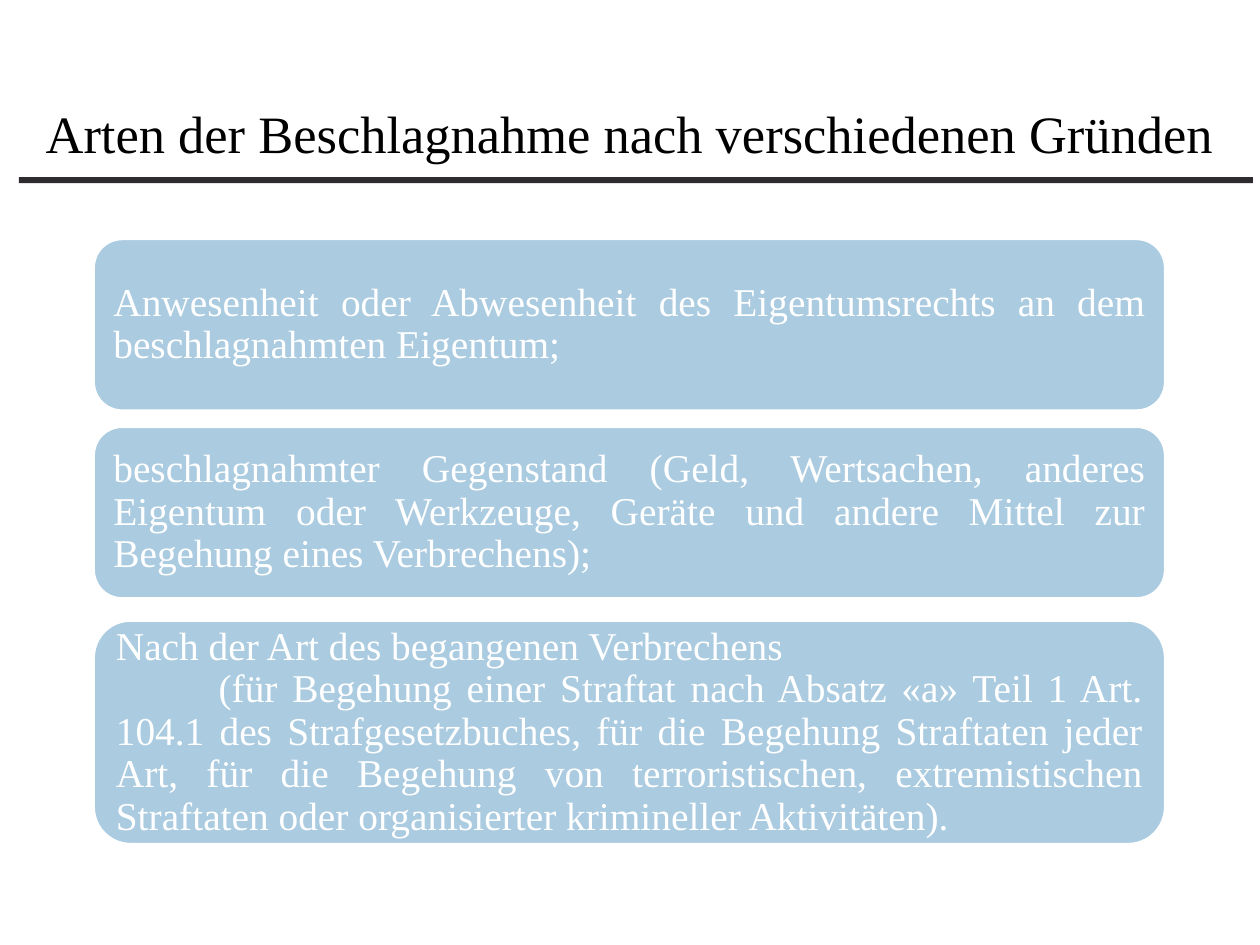
from pptx import Presentation
from pptx.dml.color import RGBColor
from pptx.enum import shapes, text
from pptx.util import Inches, Pt

TITLE = "Arten der Beschlagnahme nach verschiedenen Gründen"
# One entry per box: top, height, paragraphs as (first-line indent, wording)
GROUNDS = [
    (2.02, 1.46, [(0, "Anwesenheit oder Abwesenheit des Eigentumsrechts an dem "
                      "beschlagnahmten Eigentum;")]),
    (3.61, 1.46, [(0, "beschlagnahmter Gegenstand (Geld, Wertsachen, anderes Eigentum "
                      "oder Werkzeuge, Geräte und andere Mittel zur Begehung eines "
                      "Verbrechens);")]),
    (5.25, 1.9, [(0, "Nach der Art des begangenen Verbrechens"),
                 (0.87, "(für Begehung einer Straftat nach Absatz «a» Teil 1 Art. 104.1 "
                        "des Strafgesetzbuches, für die Begehung Straftaten jeder Art, "
                        "für die Begehung von terroristischen, extremistischen "
                        "Straftaten oder organisierter krimineller Aktivitäten).")]),
]
THEME = {
    "font": "Times New Roman",
    "title_size": 32,
    "body_size": 24,
    "ink": RGBColor(0x00, 0x00, 0x00),
    "white": RGBColor(0xFF, 0xFF, 0xFF),
    "box": RGBColor(0xAA, 0xCB, 0xE0),
    "rule": RGBColor(0x2E, 0x2C, 0x2F),
}
WIDTH, HEIGHT = 10.67, 8
BOX_LEFT, BOX_WIDTH = 0.79, 9.08
INSET = Inches(0.1)


def place(shape, left, top, width, height):
    shape.left, shape.top = Inches(left), Inches(top)
    shape.width, shape.height = Inches(width), Inches(height)


def style_runs(paragraph, size, color):
    for run in paragraph.runs:
        run.font.name = THEME["font"]
        run.font.size = Pt(size)
        run.font.color.rgb = color


def add_title(slide):
    title = slide.shapes.title
    place(title, 0, 0.5, WIDTH, 1.25)
    frame = title.text_frame
    frame.text = TITLE
    frame.word_wrap = True
    frame.vertical_anchor = text.MSO_ANCHOR.MIDDLE
    frame.paragraphs[0].alignment = text.PP_ALIGN.CENTER
    style_runs(frame.paragraphs[0], THEME["title_size"], THEME["ink"])


def add_filled(slide, kind, bounds, color):
    shape = slide.shapes.add_shape(kind, *map(Inches, bounds))
    shape.shadow.inherit = False
    shape.fill.solid()
    shape.fill.fore_color.rgb = color
    return shape


def add_ground(slide, top, height, paragraphs):
    box = add_filled(slide, shapes.MSO_SHAPE.ROUNDED_RECTANGLE,
                     (BOX_LEFT, top, BOX_WIDTH, height), THEME["box"])
    box.line.color.rgb = THEME["white"]
    box.line.width = Pt(2)
    frame = box.text_frame
    frame.word_wrap = True
    frame.vertical_anchor = text.MSO_ANCHOR.MIDDLE
    frame.margin_left = frame.margin_right = INSET
    frame.margin_top = frame.margin_bottom = INSET
    frame.text = "\n".join(wording for _, wording in paragraphs)
    for paragraph, (indent, _) in zip(frame.paragraphs, paragraphs):
        paragraph.alignment = text.PP_ALIGN.JUSTIFY
        paragraph.line_spacing = 0.9
        if indent:
            paragraph._p.get_or_add_pPr().set("indent", str(Inches(indent)))
        style_runs(paragraph, THEME["body_size"], THEME["white"])


def main():
    deck = Presentation()
    deck.slide_width, deck.slide_height = Inches(WIDTH), Inches(HEIGHT)
    slide = deck.slides.add_slide(deck.slide_layouts.get_by_name("Title Only"))
    add_title(slide)
    for ground in GROUNDS:
        add_ground(slide, *ground)
    rule = add_filled(slide, shapes.MSO_SHAPE.RECTANGLE,
                      (0.16, 1.5, 10.45, 0.05), THEME["rule"])
    rule.line.fill.background()
    deck.save("out.pptx")


if __name__ == "__main__":
    main()
